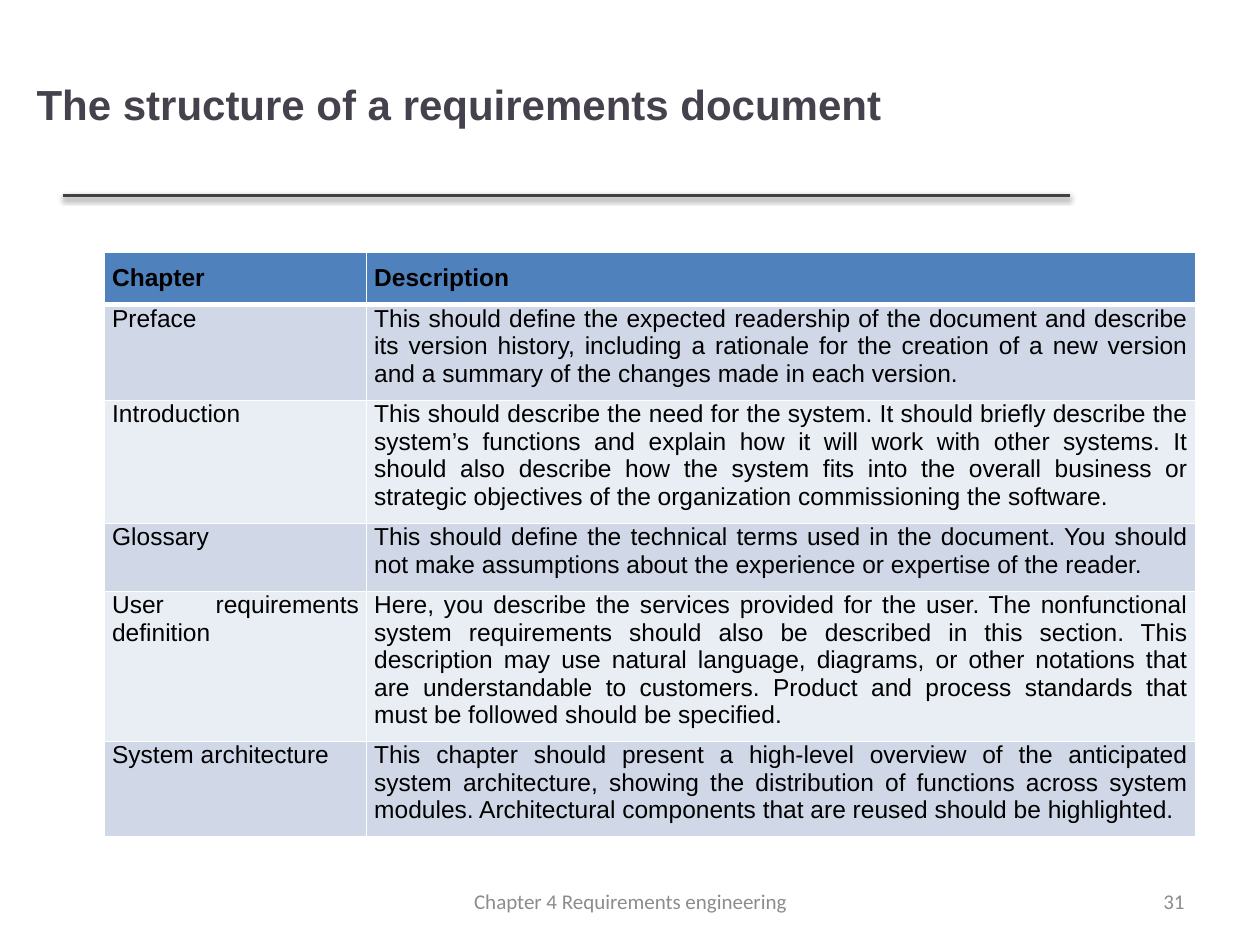
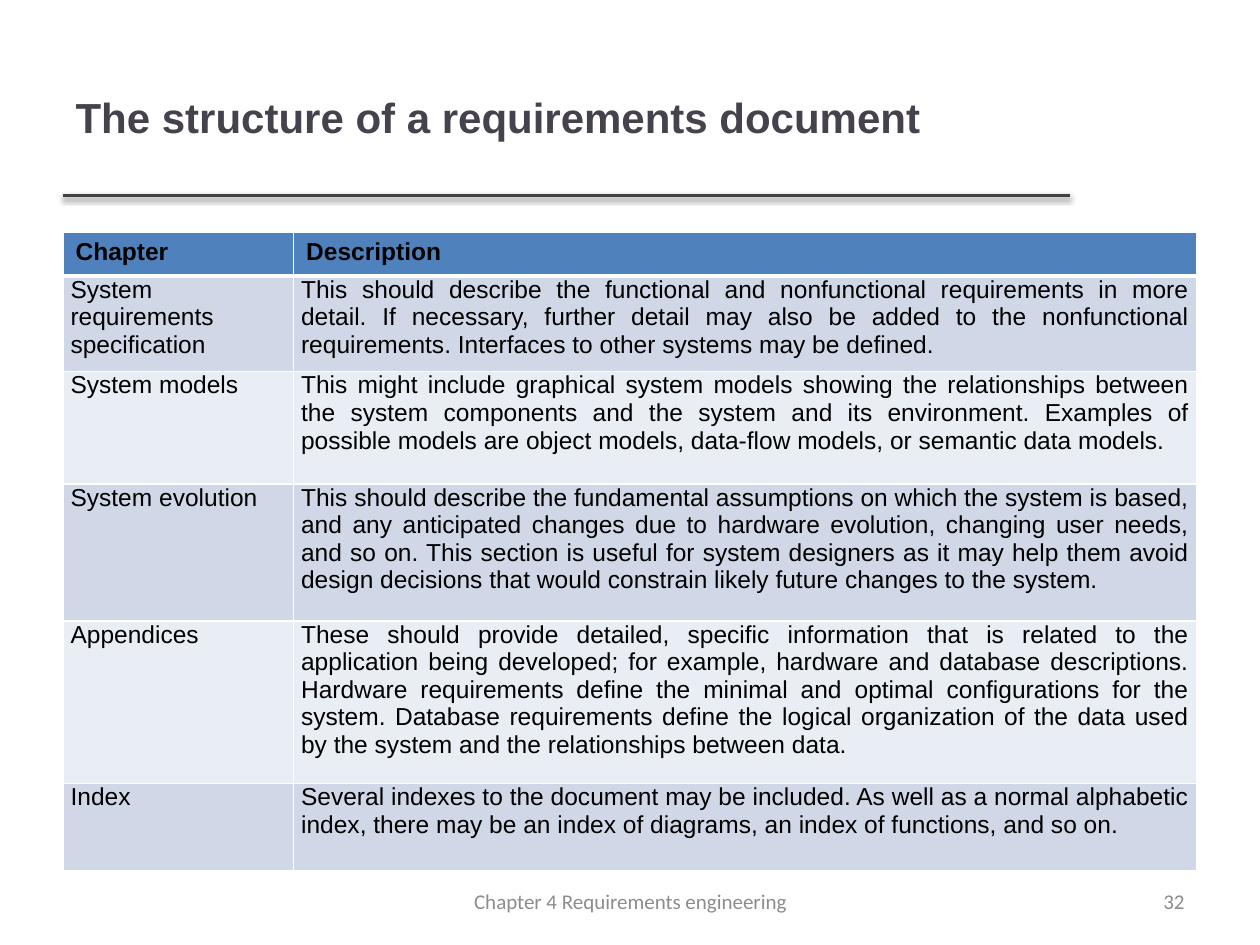
from dataclasses import dataclass

from lxml import etree
from pptx import Presentation
from pptx import util as u
from pptx.dml.color import RGBColor
from pptx.enum import shapes, text
from pptx.oxml.ns import qn

Inches = u.Inches


@dataclass(frozen=True)
class Theme:
    title_color: str = "46424D"
    rule_color: str = "404040"
    footer_color: str = "8C8C8C"
    text_color: str = "000000"
    header_fill: str = "4F81BD"
    bands: tuple = ("D0D8E8", "E9EDF4")
    border: str = "FFFFFF"
    shadow: str = "000000"
    body_font: str = "Arial"
    footer_font: str = "Calibri"
    title_size: int = 24
    table_size: int = 14
    footer_size: int = 12


TITLE = "The structure of a requirements document"
FOOTER = "Chapter 4 Requirements engineering"
HEADER = ("Chapter", "Description")
BODY_INSETS = (0.06, 0, 0.06, 0.1)

PAGES = [
    {
        "number": 31,
        "title_at": (0.19, 0.23, 8.06, 1.19),
        "table_at": (0.83, 2),
        "columns": (2.08, 6.58),
        "heights": (0.41, 0.76, 0.97, 0.54, 1.19, 0.75),
        "header_insets": (0.06, 0.1, 0.06, 0.1),
        "header_align": text.PP_ALIGN.JUSTIFY,
        "rows": [
            ("Preface",
             "This should define the expected readership of the document and describe its version "
             "history, including a rationale for the creation of a new version and a summary of "
             "the changes made in each version."),
            ("Introduction",
             "This should describe the need for the system. It should briefly describe the "
             "system’s functions and explain how it will work with other systems. It should also "
             "describe how the system fits into the overall business or strategic objectives of "
             "the organization commissioning the software."),
            ("Glossary",
             "This should define the technical terms used in the document. You should not make "
             "assumptions about the experience or expertise of the reader."),
            ("User requirements definition",
             "Here, you describe the services provided for the user. The nonfunctional system "
             "requirements should also be described in this section. This description may use "
             "natural language, diagrams, or other notations that are understandable to "
             "customers. Product and process standards that must be followed should be "
             "specified."),
            ("System architecture",
             "This chapter should present a high-level overview of the anticipated system "
             "architecture, showing the distribution of functions across system modules. "
             "Architectural components that are reused should be highlighted."),
        ],
    },
    {
        "number": 32,
        "title_at": (0.5, 0.3, 7.98, 1.25),
        "table_at": (0.5, 1.84),
        "columns": (1.83, 7.17),
        "heights": (0.35, 0.76, 0.89, 1.09, 1.29, 0.69),
        "header_insets": (0.1, 0.05, 0.1, 0.05),
        "header_align": text.PP_ALIGN.LEFT,
        "rows": [
            ("System requirements specification",
             "This should describe the functional and nonfunctional requirements in more detail. "
             "If necessary, further detail may also be added to the nonfunctional requirements. "
             "Interfaces to other systems may be defined."),
            ("System models",
             "This might include graphical system models showing the relationships between the "
             "system components and the system and its environment. Examples of possible models "
             "are object models, data-flow models, or semantic data models."),
            ("System evolution",
             "This should describe the fundamental assumptions on which the system is based, and "
             "any anticipated changes due to hardware evolution, changing user needs, and so on. "
             "This section is useful for system designers as it may help them avoid design "
             "decisions that would constrain likely future changes to the system."),
            ("Appendices",
             "These should provide detailed, specific information that is related to the "
             "application being developed; for example, hardware and database descriptions. "
             "Hardware requirements define the minimal and optimal configurations for the "
             "system. Database requirements define the logical organization of the data used by "
             "the system and the relationships between data."),
            ("Index",
             "Several indexes to the document may be included. As well as a normal alphabetic "
             "index, there may be an index of diagrams, an index of functions, and so on."),
        ],
    },
]


def assign(target, **values):
    for name, value in values.items():
        setattr(target, name, value)


def add_color(parent, color):
    fill = etree.SubElement(parent, qn("a:solidFill"))
    return etree.SubElement(fill, qn("a:srgbClr"), val=color)


class DeckBuilder:
    def __init__(self, theme):
        self.theme = theme
        self.deck = Presentation()
        assign(self.deck, slide_width=Inches(10), slide_height=Inches(7.5))
        self.page = None

    def add_page(self):
        self.page = self.deck.slides.add_slide(self.deck.slide_layouts[5])

    def set_words(self, frame, words, align, font, size, color, bold=False):
        frame.word_wrap = True
        para = frame.paragraphs[0]
        para.alignment = align
        span = para.add_run()
        span.text = words
        assign(span.font, name=font, size=u.Pt(size), bold=bold)
        span.font.color.rgb = RGBColor.from_string(color)

    def title(self, words, at):
        box = self.page.shapes.title
        assign(box, **dict(zip(("left", "top", "width", "height"), map(Inches, at))))
        assign(box.text_frame, auto_size=text.MSO_AUTO_SIZE.NONE,
               vertical_anchor=text.MSO_ANCHOR.MIDDLE)
        self.set_words(box.text_frame, words, text.PP_ALIGN.LEFT, self.theme.body_font,
                       self.theme.title_size, self.theme.title_color, True)

    def rule(self):
        line = self.page.shapes.add_connector(
            shapes.MSO_CONNECTOR.STRAIGHT,
            Inches(0.5), Inches(1.55), Inches(8.49), Inches(1.55))
        line.line.width = u.Pt(2)
        line.line.color.rgb = RGBColor.from_string(self.theme.rule_color)
        effects = etree.SubElement(line._element.spPr, qn("a:effectLst"))
        shadow = etree.SubElement(
            effects, qn("a:outerShdw"), blurRad=str(u.Pt(3.1)), dist=str(u.Pt(1.6)),
            dir="5400000", rotWithShape="0")
        color = etree.SubElement(shadow, qn("a:srgbClr"), val=self.theme.shadow)
        etree.SubElement(color, qn("a:alpha"), val="38000")

    def footer(self, words, left, width, align):
        box = self.page.shapes.add_textbox(
            Inches(left), Inches(6.95), Inches(width), Inches(0.4))
        box.text_frame.vertical_anchor = text.MSO_ANCHOR.MIDDLE
        self.set_words(box.text_frame, words, align, self.theme.footer_font,
                       self.theme.footer_size, self.theme.footer_color)

    def borders(self, cell, row):
        widths = {"L": 1, "R": 1, "T": 3 if row == 1 else 1, "B": 3 if row == 0 else 1}
        properties = cell._tc.get_or_add_tcPr()
        for side, width in widths.items():
            edge = etree.SubElement(properties, qn(f"a:ln{side}"), w=str(u.Pt(width)))
            add_color(edge, self.theme.border)

    def cell(self, cell, words, row, align, insets):
        theme = self.theme
        sides = ("margin_left", "margin_top", "margin_right", "margin_bottom")
        assign(cell, **dict(zip(sides, map(Inches, insets))))
        self.borders(cell, row)
        color = theme.bands[(row - 1) % 2] if row else theme.header_fill
        cell.fill.solid()
        cell.fill.fore_color.rgb = RGBColor.from_string(color)
        self.set_words(cell.text_frame, words, align, theme.body_font, theme.table_size,
                       theme.text_color, row == 0)

    def table(self, rows, at, columns, heights, header_insets, header_align):
        left, top = at
        table = self.page.shapes.add_table(
            len(heights), len(columns), Inches(left), Inches(top),
            Inches(sum(columns)), Inches(sum(heights))).table
        for column, width in zip(table.columns, columns):
            column.width = Inches(width)
        for line, height in zip(table.rows, heights):
            line.height = Inches(height)
        for row, entries in enumerate([HEADER, *rows]):
            align = text.PP_ALIGN.JUSTIFY if row else header_align
            insets = BODY_INSETS if row else header_insets
            for column, words in enumerate(entries):
                self.cell(table.cell(row, column), words, row, align, insets)


def main():
    builder = DeckBuilder(Theme())
    for content in PAGES:
        builder.add_page()
        builder.rule()
        builder.title(TITLE, content["title_at"])
        builder.table(content["rows"], content["table_at"], content["columns"],
                      content["heights"], content["header_insets"], content["header_align"])
        builder.footer(str(content["number"]), 7.17, 2.33, text.PP_ALIGN.RIGHT)
        builder.footer(FOOTER, 3.42, 3.17, text.PP_ALIGN.CENTER)
    builder.deck.save("out.pptx")


if __name__ == "__main__":
    main()
